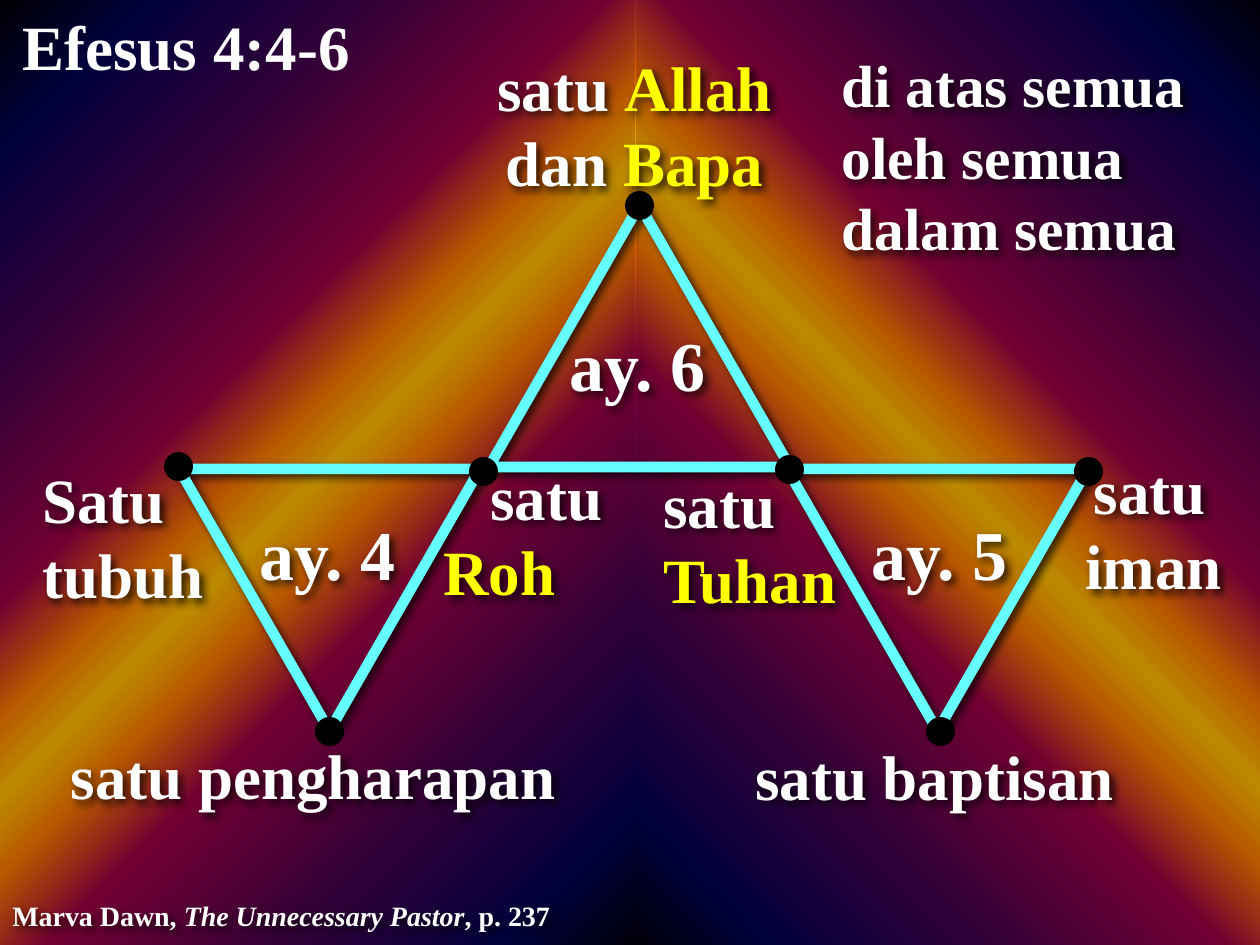
from dataclasses import dataclass

from lxml.etree import SubElement
from pptx import Presentation
from pptx.dml.color import RGBColor
from pptx.enum.shapes import MSO_SHAPE
from pptx.enum.text import MSO_ANCHOR, MSO_AUTO_SIZE, PP_ALIGN
from pptx.oxml.ns import qn
from pptx.util import Emu, Pt

EMU_PER_PX = 914400 / 126
FONT = "Times New Roman"
WHITE, YELLOW, BLACK, CYAN = "FFFFFF", "FFFF00", "000000", "66FFFF"
HALF_RAINBOW = [(0, "000000", 100), (10, "000040", 95), (25, "400040", 86),
                (38, "8F0040", 80), (45, "F27300", 76)]
RAINBOW = (HALF_RAINBOW + [(50, "FFBF00", 73)]
           + [(100 - stop, color, alpha) for stop, color, alpha in reversed(HALF_RAINBOW)])
TRIANGLE_WIDTH, TRIANGLE_HEIGHT, DOT_SIZE = 301, 262, 29


@dataclass(frozen=True)
class Span:
    text: str
    color: str = WHITE
    italic: bool = False


@dataclass(frozen=True)
class Label:
    left: int
    top: int
    width: int
    height: int
    paragraphs: tuple[tuple[Span, ...], ...]
    size: int = 36
    align: PP_ALIGN = PP_ALIGN.LEFT
    indent: int = 0
    title: bool = False


@dataclass(frozen=True)
class Triangle:
    left: int
    top: int
    pointing_down: bool


LABELS = [
    Label(0, 892, 567, 47, ((Span("Marva Dawn, "), Span("The Unnecessary Pastor", italic=True),
                             Span(", p. 237")),), size=16),
    Label(829, 42, 404, 229, ((Span("di atas semua"),), (Span("oleh semua"),),
                              (Span("dalam semua"),)), size=34),
    Label(651, 459, 252, 165, ((Span("satu "), Span("Tuhan", YELLOW)),)),
    Label(30, 454, 210, 165, ((Span("Satu tubuh"),),)),
    Label(431, 451, 252, 165, ((Span("satu "), Span("Roh", YELLOW)),), indent=47),
    Label(940, 445, 294, 164, ((Span("satu "),), (Span("iman"),)), align=PP_ALIGN.RIGHT),
    Label(18, 730, 590, 89, ((Span("satu pengharapan"),),), align=PP_ALIGN.CENTER),
    Label(735, 731, 399, 88, ((Span("satu baptisan"),),), align=PP_ALIGN.CENTER),
    Label(461, 42, 347, 164, ((Span("satu "), Span("Allah ", YELLOW), Span("dan "),
                               Span("Bapa", YELLOW)),), align=PP_ALIGN.CENTER),
    Label(543, 315, 189, 97, ((Span("ay. 6"),),), size=40, align=PP_ALIGN.CENTER),
    Label(233, 504, 189, 97, ((Span("ay. 4"),),), size=40, align=PP_ALIGN.CENTER),
    Label(845, 504, 189, 97, ((Span("ay. 5"),),), size=40, align=PP_ALIGN.CENTER),
    Label(10, -10, 525, 110, ((Span("Efesus 4:4-6"),),), title=True),
]
TRIANGLES = [Triangle(489, 205, False), Triangle(179, 469, True), Triangle(787, 469, True)]
DOTS = [(625, 191), (164, 452), (315, 717), (469, 457), (775, 455), (926, 717), (1074, 457)]


def px(length: int) -> Emu:
    return Emu(round(length * EMU_PER_PX))


def rgb(color: str) -> RGBColor:
    return RGBColor.from_string(color)


def add_color(parent, color: str, alpha: int) -> None:
    element = SubElement(parent, qn("a:srgbClr"), val=color)
    SubElement(element, qn("a:alpha"), val=str(alpha * 1000))


def add_shadow(shape) -> None:
    shape.shadow.inherit = False
    effects = shape._element.spPr.find(qn("a:effectLst"))
    shadow = SubElement(effects, qn("a:outerShdw"), blurRad=str(Pt(5)), dist=str(Pt(3)),
                        dir=str(45 * 60000), algn="tl", rotWithShape="0")
    add_color(shadow, BLACK, 75)


def add_filled(slide, kind: MSO_SHAPE, left: int, top: int, width: int, height: int):
    """Add a black shape without outline or shadow."""
    shape = slide.shapes.add_shape(kind, px(left), px(top), px(width), px(height))
    shape.shadow.inherit = False
    shape.fill.solid()
    shape.fill.fore_color.rgb = rgb(BLACK)
    shape.line.fill.background()
    return shape


def add_rainbow_panel(slide, left: int, angle: int) -> None:
    panel = add_filled(slide, MSO_SHAPE.RECTANGLE, left, 0, 644, 969)
    properties = panel._element.spPr
    gradient = SubElement(properties, qn("a:gradFill"), rotWithShape="1")
    stops = SubElement(gradient, qn("a:gsLst"))
    for position, color, alpha in RAINBOW:
        stop = SubElement(stops, qn("a:gs"), pos=str(position * 1000))
        add_color(stop, color, alpha)
    SubElement(gradient, qn("a:lin"), ang=str(angle * 60000), scaled="1")
    properties.replace(properties.find(qn("a:solidFill")), gradient)


def add_triangle(slide, triangle: Triangle) -> None:
    shape = slide.shapes.add_shape(MSO_SHAPE.ISOSCELES_TRIANGLE, px(triangle.left),
                                   px(triangle.top), px(TRIANGLE_WIDTH), px(TRIANGLE_HEIGHT))
    if triangle.pointing_down:
        shape._element.spPr.find(qn("a:xfrm")).set("flipV", "1")
    shape.fill.background()
    shape.line.color.rgb = rgb(CYAN)
    shape.line.width = Pt(6)
    add_shadow(shape)


def add_label(slide, label: Label) -> None:
    box = slide.shapes.add_textbox(px(label.left), px(label.top),
                                   px(label.width), px(label.height))
    frame = box.text_frame
    frame.word_wrap = True
    if label.title:
        frame.vertical_anchor = MSO_ANCHOR.MIDDLE
    else:
        frame.auto_size = MSO_AUTO_SIZE.SHAPE_TO_FIT_TEXT
        add_shadow(box)
    for index, spans in enumerate(label.paragraphs):
        para = frame.add_paragraph() if index else frame.paragraphs[0]
        para.alignment = label.align
        if label.indent:
            para._p.get_or_add_pPr().set("indent", str(px(label.indent)))
        for span in spans:
            run = para.add_run()
            run.text = span.text
            run.font.name = FONT
            run.font.size = Pt(label.size)
            run.font.bold = True
            run.font.italic = span.italic
            run.font.color.rgb = rgb(span.color)


def main() -> None:
    deck = Presentation()
    deck.slide_width, deck.slide_height = px(1260), px(945)
    slide = deck.slides.add_slide(deck.slide_layouts[6])
    add_filled(slide, MSO_SHAPE.RECTANGLE, 0, 0, 1260, 945)
    add_rainbow_panel(slide, 636, 315)
    add_rainbow_panel(slide, -8, 45)
    for triangle in TRIANGLES:
        add_triangle(slide, triangle)
    for left, top in DOTS:
        add_filled(slide, MSO_SHAPE.OVAL, left, top, DOT_SIZE, DOT_SIZE)
    for label in LABELS:
        add_label(slide, label)
    deck.save("out.pptx")


if __name__ == "__main__":
    main()
